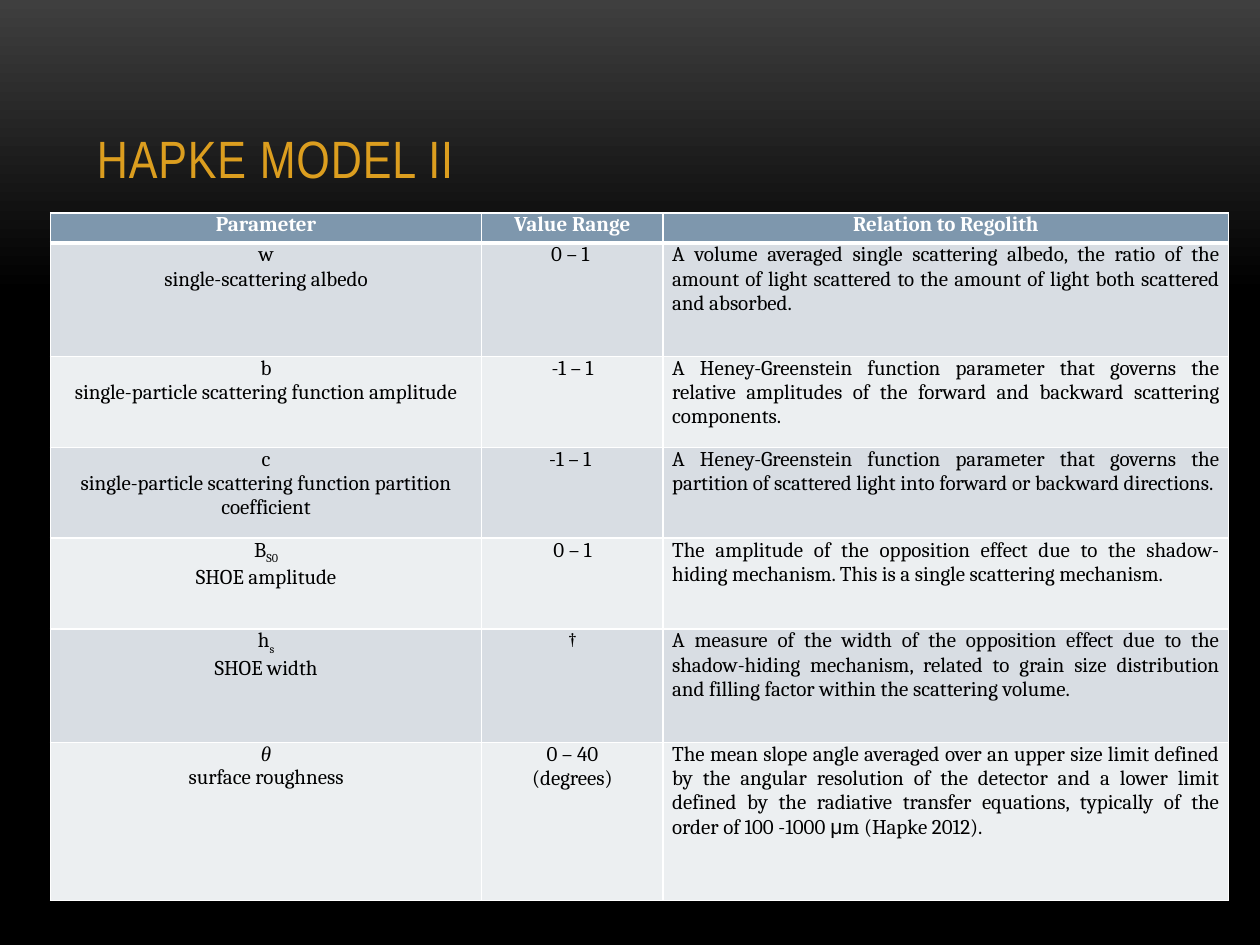
from lxml.etree import SubElement
from pptx import Presentation
from pptx.dml.color import RGBColor
from pptx.enum.text import MSO_ANCHOR, MSO_AUTO_SIZE, PP_ALIGN
from pptx.oxml.ns import qn
from pptx.util import Cm, Pt


def rgb(hex_code):
    return RGBColor.from_string(hex_code)


def add_border(cell, side, points):
    """Draw a white line on one side (L, R, T or B); call before filling the cell."""
    line = SubElement(cell._tc.get_or_add_tcPr(), qn(f"a:ln{side}"), w=str(Pt(points)))
    SubElement(SubElement(line, qn("a:solidFill")), qn("a:srgbClr"), val="FFFFFF")


prs = Presentation()
prs.slide_width, prs.slide_height = Cm(25.4), Cm(19.05)
slide = prs.slides.add_slide(prs.slide_layouts[5])

# Background fading from grey to black
backdrop = slide.background.fill
backdrop.gradient()
backdrop.gradient_angle = 270
for stop, (position, color) in zip(backdrop.gradient_stops, [(0, "3F3F3F"), (0.31, "000000")]):
    stop.position = position
    stop.color.rgb = rgb(color)

# Title
title = slide.shapes.title
title.left, title.top, title.width, title.height = Cm(1.7), Cm(0.76), Cm(22.02), Cm(3.18)
heading = title.text_frame
heading.auto_size = MSO_AUTO_SIZE.NONE
heading.vertical_anchor = MSO_ANCHOR.BOTTOM
heading.paragraphs[0].alignment = PP_ALIGN.LEFT
run = heading.paragraphs[0].add_run()
run.text = "HAPKE MODEL II"
run.font.name = "Arial Narrow"
run.font.size = Pt(30)
run.font.color.rgb = rgb("DC9E1F")
run.font._element.set("spc", "50")

# Each cell is a list of paragraphs; each paragraph is a list of (text, style) runs
PLAIN, SUBSCRIPT, SYMBOL, MICRO = "plain", "subscript", "symbol", "micro"
parameters = [
    ("Parameter", "Value Range", "Relation to Regolith"),
    (["w", "single-scattering albedo"], "0 – 1 ",
     "A volume averaged single scattering albedo, the ratio of the amount of light "
     "scattered to the amount of light both scattered and absorbed."),
    (["b", "single-particle scattering function amplitude"], "-1 – 1",
     "A Heney-Greenstein function parameter that governs the relative amplitudes of "
     "the forward and backward scattering components."),
    (["c", "single-particle scattering function partition coefficient"], "-1 – 1 ",
     "A Heney-Greenstein function parameter that governs the partition of scattered "
     "light into forward or backward directions."),
    ([[("B", PLAIN), ("S0", SUBSCRIPT)], "SHOE amplitude"], "0 – 1",
     "The amplitude of the opposition effect due to the shadow-hiding mechanism. "
     "This is a single scattering mechanism."),
    ([[("h", PLAIN), ("s", SUBSCRIPT)], "SHOE width"], "†",
     "A measure of the width of the opposition effect due to the shadow-hiding "
     "mechanism, related to grain size distribution and filling factor within the "
     "scattering volume."),
    ([[("θ", SYMBOL)], "surface roughness"], ["0 – 40", "(degrees)"],
     [[("The mean slope angle averaged over an upper size limit defined by the angular "
        "resolution of the detector and a lower limit defined by the radiative transfer "
        "equations, typically of the order of 100 -1000 ", PLAIN),
       ("μ", MICRO), ("m (Hapke 2012).", PLAIN)]]),
]
column_widths = [8.69, 3.66, 11.4]
row_heights = [0.61, 2.29, 1.83, 1.83, 1.83, 2.29, 3.18]
run_fonts = {SYMBOL: "Times New Roman", MICRO: "Arial"}

table = slide.shapes.add_table(
    len(row_heights), len(column_widths), Cm(1.02), Cm(4.29),
    Cm(sum(column_widths)), Cm(sum(row_heights))).table
table.horz_banding = False
for column, width in zip(table.columns, column_widths):
    column.width = Cm(width)
for row, height in zip(table.rows, row_heights):
    row.height = Cm(height)

for r, contents in enumerate(parameters):
    is_header = r == 0
    band = "7E97AD" if is_header else ("ECEFF1", "D8DDE3")[r % 2]
    for c, content in enumerate(contents):
        cell = table.cell(r, c)
        cell.margin_left = cell.margin_right = Cm(0.18)
        cell.margin_top = cell.margin_bottom = 0
        add_border(cell, "L", 1)
        add_border(cell, "R", 1)
        add_border(cell, "T", 3 if r == 1 else 1)
        add_border(cell, "B", 3 if is_header else 1)
        cell.fill.solid()
        cell.fill.fore_color.rgb = rgb(band)

        lines = [content] if isinstance(content, str) else content
        for i, line in enumerate(lines):
            paragraph = cell.text_frame.add_paragraph() if i else cell.text_frame.paragraphs[0]
            justified = c == 2 and not is_header
            paragraph.alignment = PP_ALIGN.JUSTIFY if justified else PP_ALIGN.CENTER
            for text, style in [(line, PLAIN)] if isinstance(line, str) else line:
                run = paragraph.add_run()
                run.text = text
                run.font.name = run_fonts.get(style, "Cambria")
                run.font.size = Pt(12)
                run.font.bold = is_header
                run.font.italic = style == SYMBOL
                run.font.color.rgb = rgb("FFFFFF" if is_header else "000000")
                if style == SUBSCRIPT:
                    run.font._element.set("baseline", "-25000")

prs.save("out.pptx")
